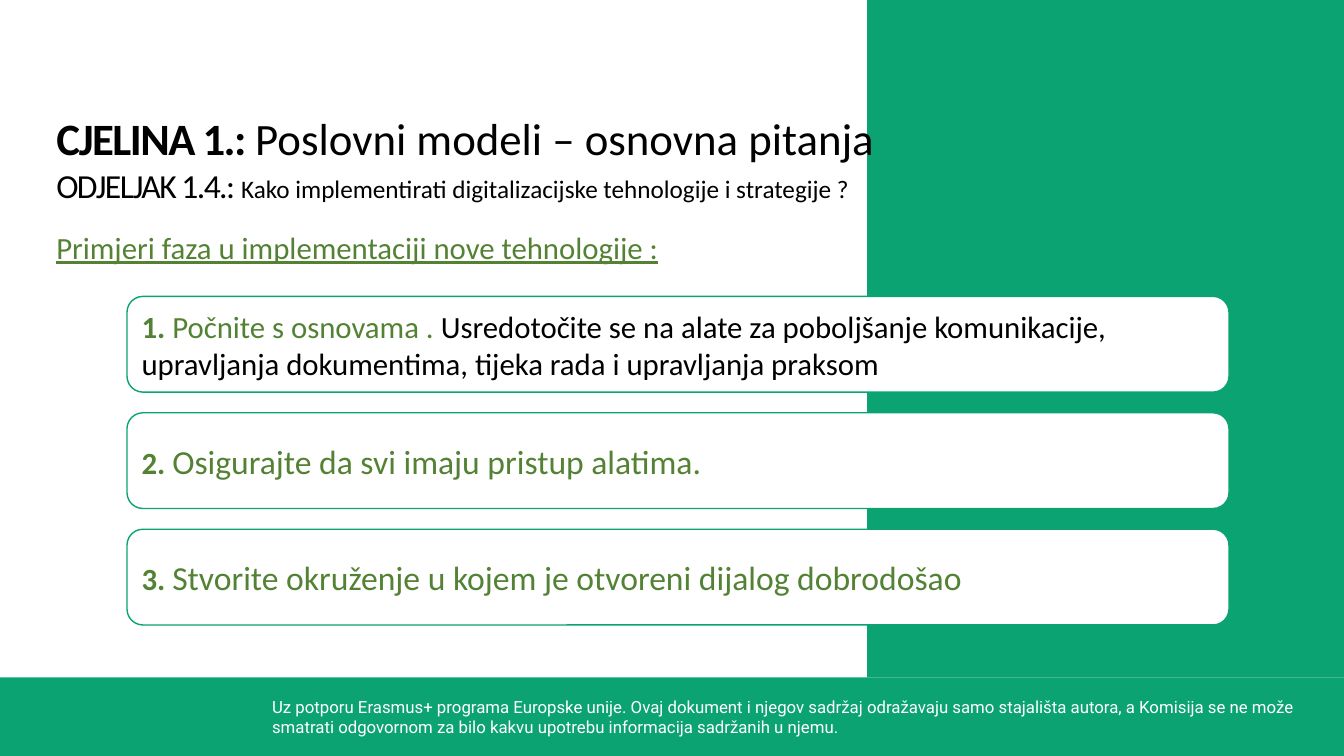
from pptx import Presentation
from pptx.dml.color import RGBColor
from pptx.enum.shapes import MSO_SHAPE
from pptx.enum.text import MSO_ANCHOR, PP_ALIGN
from pptx.util import Inches, Pt

RECT = MSO_SHAPE.RECTANGLE
ROUND = MSO_SHAPE.ROUNDED_RECTANGLE
MIDDLE = MSO_ANCHOR.MIDDLE
LEFT = PP_ALIGN.LEFT

GREEN = RGBColor(0x0C, 0xA3, 0x73)
OLIVE = RGBColor(0x54, 0x82, 0x35)
WHITE = RGBColor(0xFF, 0xFF, 0xFF)
BLACK = RGBColor(0x00, 0x00, 0x00)

WIDTH, HEIGHT = 13.33, 7.5
FOOT_TOP = 6.72
SIDE_LEFT = 8.6

STEPS = [
    [("1. ", 22, OLIVE, True),
     ("Počnite s osnovama . ", 22, OLIVE, False),
     ("Usredotočite se na alate za poboljšanje komunikacije, upravljanja "
      "dokumentima, tijeka rada i upravljanja praksom", 22, BLACK, False)],
    [("2. ", 22, OLIVE, True),
     ("Osigurajte da svi imaju pristup alatima.", 24, OLIVE, False)],
    [("3. ", 22, OLIVE, True),
     ("Stvorite okruženje u kojem je otvoreni dijalog dobrodošao",
      24, OLIVE, False)],
]


def add_run(para, text, size, color, bold=False, face="Calibri", track=0):
    """Add one run; track is the letter spacing in points."""
    run = para.add_run()
    run.text = text
    font = run.font
    font.name, font.size, font.bold = face, Pt(size), bold
    font.color.rgb = color
    if track:
        run._r.get_or_add_rPr().set("spc", str(round(track * 100)))
    return run


def add_panel(slide, kind, left, top, width, height, fill):
    panel = slide.shapes.add_shape(
        kind, Inches(left), Inches(top), Inches(width), Inches(height))
    panel.shadow.inherit = False
    panel.fill.solid()
    panel.fill.fore_color.rgb = fill
    panel.line.fill.background()
    return panel


def add_text(slide, left, top, width, height):
    box = slide.shapes.add_textbox(
        Inches(left), Inches(top), Inches(width), Inches(height))
    box.text_frame.word_wrap = True
    return box.text_frame


def add_footer(slide, left, top, width, height):
    add_panel(slide, RECT, left, top, width, height, GREEN)
    frame = add_text(slide, left + 2.6, top + 0.14, 10.42, 0.5)
    add_run(frame.paragraphs[0],
            "Uz potporu Erasmus+ programa Europske unije. Ovaj dokument i "
            "njegov sadržaj odražavaju samo stajališta autora, a Komisija se "
            "ne može smatrati odgovornom za bilo kakvu upotrebu informacija "
            "sadržanih u njemu.", 12, WHITE, face="Roboto")


def add_heading(slide, left, top, width, height):
    frame = add_text(slide, left, top, width, height)
    title = frame.paragraphs[0]
    add_run(title, "CJELINA 1.: ", 32, BLACK, True, track=-1.1)
    add_run(title, "Poslovni modeli – osnovna pitanja", 32, BLACK)
    part = frame.add_paragraph()
    add_run(part, "ODJELJAK 1.4.: ", 24, BLACK, track=-1.1)
    add_run(part, "Kako implementirati digitalizacijske tehnologije i "
            "strategije ?", 18, BLACK)
    lead = frame.add_paragraph()
    lead.space_before = Pt(17)
    run = add_run(lead, "Primjeri faza u implementaciji nove tehnologije :",
                  22, OLIVE)
    run.font.underline = True


def add_steps(slide, left, top, width, height):
    """Stack one card per step, evenly spread over the given height."""
    card_high = 0.95
    pitch = (height - card_high) / (len(STEPS) - 1)
    for row, step in enumerate(STEPS):
        card = add_panel(slide, ROUND, left, top + row * pitch, width,
                         card_high, WHITE)
        card.line.color.rgb = GREEN
        card.line.width = Pt(1)
        frame = card.text_frame
        frame.word_wrap = True
        frame.vertical_anchor = MIDDLE
        para = frame.paragraphs[0]
        para.alignment = LEFT
        for text, size, color, bold in step:
            add_run(para, text, size, color, bold)


def main():
    deck = Presentation()
    deck.slide_width, deck.slide_height = Inches(WIDTH), Inches(HEIGHT)
    slide = deck.slides.add_slide(deck.slide_layouts[6])
    add_footer(slide, 0, FOOT_TOP, WIDTH, HEIGHT - FOOT_TOP)
    add_panel(slide, RECT, SIDE_LEFT, 0, WIDTH - SIDE_LEFT, FOOT_TOP, GREEN)
    add_heading(slide, 0.46, 1.05, 12.75, 5.62)
    add_steps(slide, 1.26, 2.94, 10.93, 3.26)
    deck.save("out.pptx")


if __name__ == "__main__":
    main()
